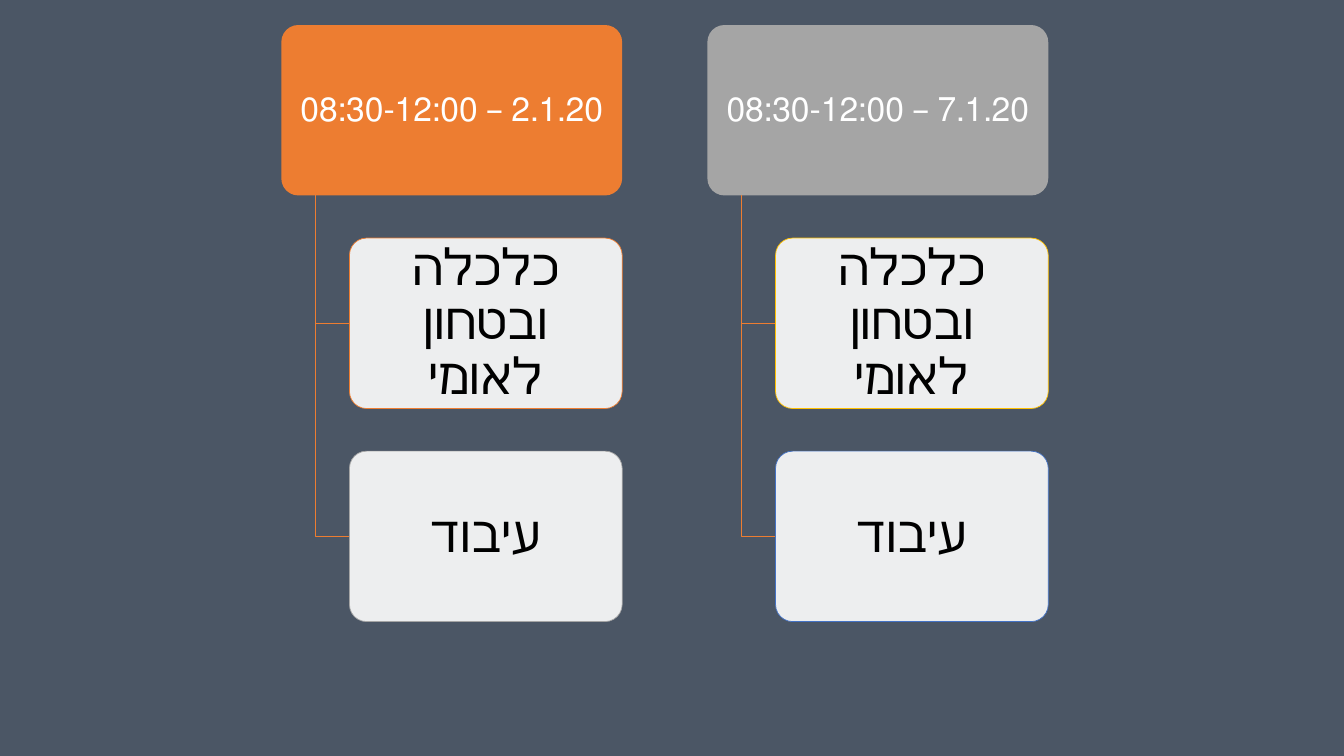
from lxml import etree
from pptx import Presentation
from pptx.dml.color import RGBColor
from pptx.enum.lang import MSO_LANGUAGE_ID as LANG
from pptx.enum.shapes import MSO_SHAPE as SHAPE
from pptx.enum.text import MSO_ANCHOR as ANCHOR, PP_ALIGN as ALIGN
from pptx.oxml.ns import qn
from pptx.util import Cm, Pt

COLORS = {
    "back": "4B5665", "white": "FFFFFF", "black": "000000",
    "orange": "ED7D31", "gray": "A5A5A5", "gold": "FFC000", "blue": "4472C4",
}

# Hierarchy proportions, in cm, all derived from the header width
HEAD_W = 8.59
BOX_H = HEAD_W / 2
INDENT = HEAD_W / 5
COL_STEP = HEAD_W * 1.25
ROW_STEP = BOX_H * 1.25
LEFT, TOP = 7.09, 0.63

TOPICS = ["כלכלה ובטחון לאומי", "עיבוד"]
DAYS = [
    ("2.1.20 – 08:30-12:00", "orange", ["orange", "gray"]),
    ("7.1.20 – 08:30-12:00", "gray", ["gold", "blue"]),
]


class Schedule:
    font = "Calibri"

    def __init__(self, prs):
        self.s = prs.slides.add_slide(prs.slide_layouts[6])
        fill = self.s.background.fill
        fill.solid()
        fill.fore_color.rgb = self.color("back")

    def color(self, name):
        return RGBColor.from_string(COLORS[name])

    def box(self, x, y, w, fill, line=None, opacity=100):
        sp = self.s.shapes.add_shape(SHAPE.ROUNDED_RECTANGLE, Cm(x), Cm(y), Cm(w), Cm(BOX_H))
        sp.adjustments[0] = 0.1
        sp.shadow.inherit = False
        sp.fill.solid()
        sp.fill.fore_color.rgb = self.color(fill)
        if opacity < 100:
            srgb = sp.fill._xPr.find(".//" + qn("a:srgbClr"))
            etree.SubElement(srgb, qn("a:alpha"), val=str(opacity * 1000))
        if line:
            sp.line.color.rgb = self.color(line)
            sp.line.width = Pt(0.5)
        else:
            sp.line.fill.background()
        return sp

    def text(self, sp, text, size, color, inset_x, inset_y):
        tf = sp.text_frame
        tf.word_wrap = True
        tf.vertical_anchor = ANCHOR.MIDDLE
        tf.margin_left = tf.margin_right = Cm(inset_x)
        tf.margin_top = tf.margin_bottom = Cm(inset_y)
        p = tf.paragraphs[0]
        p.alignment = ALIGN.CENTER
        p.line_spacing = 0.9
        p._p.get_or_add_pPr().set("rtl", "1")
        r = p.add_run()
        r.text = text
        r.font.name = self.font
        r.font.size = Pt(size)
        r.font.color.rgb = self.color(color)
        r.font.language_id = LANG.HEBREW

    def branch(self, x, y, w, h):
        path = self.s.shapes.build_freeform(Cm(x), Cm(y))
        path.add_line_segments([(Cm(x), Cm(y + h)), (Cm(x + w), Cm(y + h))], close=False)
        sp = path.convert_to_shape()
        sp.shadow.inherit = False
        sp.fill.background()
        sp.line.color.rgb = self.color("orange")
        sp.line.width = Pt(1)


def main():
    prs = Presentation()
    prs.slide_width, prs.slide_height = Cm(33.87), Cm(19.05)
    schedule = Schedule(prs)

    for col, (date, fill, lines) in enumerate(DAYS):
        x = LEFT + col * COL_STEP
        # Day header
        head = schedule.box(x, TOP, HEAD_W, fill)
        schedule.text(head, date, 24, "white", 0.25, 0.2)
        # Topics hanging from the header
        for row, (topic, line) in enumerate(zip(TOPICS, lines), start=1):
            y = TOP + row * ROW_STEP
            stem_top = TOP + BOX_H
            schedule.branch(x + INDENT / 2, stem_top, INDENT / 2, y + BOX_H / 2 - stem_top)
            box = schedule.box(x + INDENT, y, HEAD_W - INDENT, "white", line, opacity=90)
            schedule.text(box, topic, 36, "black", 0.3, 0.25)

    prs.save("out.pptx")


if __name__ == "__main__":
    main()
